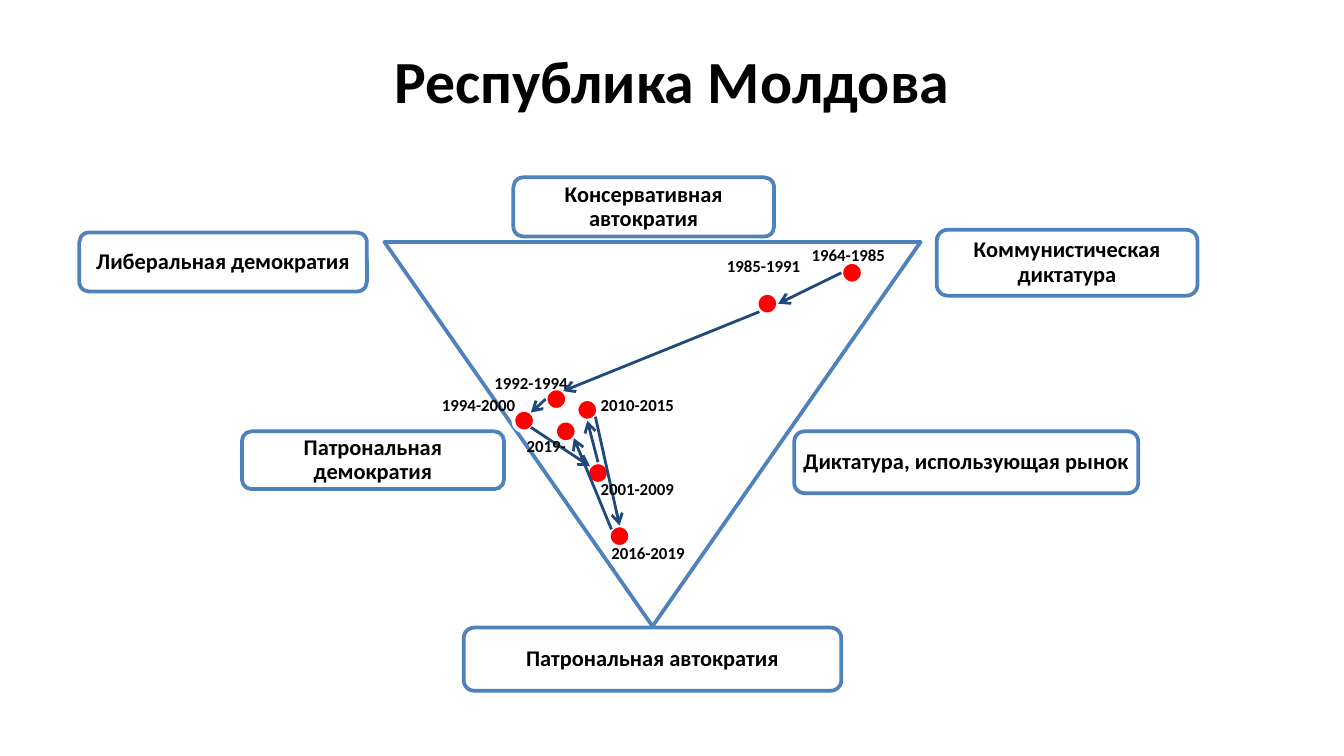
from dataclasses import dataclass

import pptx
import pptx.dml.color
import pptx.enum.shapes
import pptx.enum.text
import pptx.oxml
import pptx.oxml.ns
import pptx.util
from pptx.slide import Slide

CELL = 0.1
COLUMNS, ROWS = 100, 56.25
DOT_SIZE = 1.6
LABEL_WIDTH, LABEL_HEIGHT = 10.2, 2.5
FONT = "Calibri"
COLORS = {
    "text": "000000",
    "paper": "FFFFFF",
    "outline": "4F81BD",
    "arrow": "1F497D",
    "dot": "FF0000",
}
SHAPES = pptx.enum.shapes.MSO_SHAPE
ALIGN = pptx.enum.text.PP_ALIGN
ANCHOR = pptx.enum.text.MSO_ANCHOR


@dataclass(frozen=True)
class Regime:
    name: str
    column: float
    row: float
    width: float
    height: float


@dataclass(frozen=True)
class Stage:
    years: str
    dot: tuple[float, float]
    label: tuple[float, float]


@dataclass(frozen=True)
class Move:
    start: tuple[float, float]
    end: tuple[float, float]


REGIMES = [
    Regime("Кoммунистическая диктатура", 69.7, 17.1, 19.4, 4.9),
    Regime("Либеральная демократия", 5.9, 17.3, 21.4, 4.4),
    Regime("Патрональная автократия", 34.5, 46.7, 28.1, 4.7),
    Regime("Консервативная aвтократия", 38.2, 13.2, 19.4, 4.4),
    Regime("Диктатура, использующая рынок", 59.1, 32.1, 25.6, 4.6),
    Regime("Патрональная демократия", 18, 32.1, 19.5, 4.3),
]
STAGES = [
    Stage("1964-1985", (62.6, 19.5), (59.4, 17.7)),
    Stage("1985-1991", (56.3, 21.8), (53.1, 18.5)),
    Stage("1992-1994", (40.6, 28.9), (35.8, 27.2)),
    Stage("1994-2000", (38.2, 30.5), (31.9, 28.9)),
    Stage("2001-2009", (43.7, 34.4), (43.7, 35.1)),
    Stage("2010-2015", (42.9, 29.7), (43.7, 28.9)),
    Stage("2016-2019", (45.3, 39.1), (44.5, 39.9)),
    Stage("2019-", (41.3, 31.3), (38.2, 31.9)),
]
MOVES = [
    Move((62.6, 20.3), (57.9, 22.6)),
    Move((56.5, 23.2), (41.9, 29.1)),
    Move((40.6, 29.7), (39.5, 30.7)),
    Move((39.5, 31.8), (43.9, 34.7)),
    Move((44.5, 34.4), (43.7, 31.3)),
    Move((44.3, 31), (46.1, 39.1)),
    Move((45.5, 39.4), (42.7, 32.6)),
]


def cells(*counts: float) -> list[int]:
    return [pptx.util.Inches(count * CELL) for count in counts]


def color(name: str) -> pptx.dml.color.RGBColor:
    return pptx.dml.color.RGBColor.from_string(COLORS[name])


def write(para, text: str, size: float) -> None:
    span = para.add_run()
    span.text = text
    span.font.name = FONT
    span.font.size = pptx.util.Pt(size)
    span.font.bold = True
    span.font.color.rgb = color("text")


def draw_shape(page: Slide, kind, place: tuple, fill: str | None, outline: str):
    shape = page.shapes.add_shape(kind, *cells(*place))
    shape.shadow.inherit = False
    if fill:
        shape.fill.solid()
        shape.fill.fore_color.rgb = color(fill)
    else:
        shape.fill.background()
    shape.line.color.rgb = color(outline)
    shape.line.width = pptx.util.Pt(2)
    return shape


def draw_title(page: Slide, text: str) -> None:
    title = page.shapes.title
    title.left, title.top, title.width, title.height = cells(0, 2.1, COLUMNS, 7.7)
    title.text_frame.vertical_anchor = ANCHOR.MIDDLE
    para = title.text_frame.paragraphs[0]
    para.alignment = ALIGN.CENTER
    write(para, text, 32)


def draw_regime(page: Slide, regime: Regime) -> None:
    place = (regime.column, regime.row, regime.width, regime.height)
    box = draw_shape(page, SHAPES.ROUNDED_RECTANGLE, place, "paper", "outline")
    tint = next(box._element.spPr.iter(pptx.oxml.ns.qn("a:srgbClr")))
    alpha = pptx.oxml.parse_xml(f'<a:alpha {pptx.oxml.ns.nsdecls("a")} val="90000"/>')
    tint.append(alpha)
    frame = box.text_frame
    frame.word_wrap = True
    frame.vertical_anchor = ANCHOR.MIDDLE
    inset = pptx.util.Inches(0.02)
    frame.margin_left = frame.margin_right = inset
    frame.margin_top = frame.margin_bottom = inset
    para = frame.paragraphs[0]
    para.alignment = ALIGN.CENTER
    para.line_spacing = 0.9
    write(para, regime.name, 12)


def draw_dot(page: Slide, stage: Stage) -> None:
    draw_shape(page, SHAPES.OVAL, (*stage.dot, DOT_SIZE, DOT_SIZE), "dot", "paper")


def draw_label(page: Slide, stage: Stage) -> None:
    box = page.shapes.add_textbox(*cells(*stage.label, LABEL_WIDTH, LABEL_HEIGHT))
    box.text_frame.word_wrap = True
    write(box.text_frame.paragraphs[0], stage.years, 9)


def draw_move(page: Slide, move: Move) -> None:
    arrow = page.shapes.add_connector(
        pptx.enum.shapes.MSO_CONNECTOR.STRAIGHT, *cells(*move.start, *move.end)
    )
    arrow.line.color.rgb = color("arrow")
    arrow.line.width = pptx.util.Pt(1.5)
    namespace = pptx.oxml.ns.nsdecls("a")
    head = pptx.oxml.parse_xml(f'<a:tailEnd {namespace} type="arrow"/>')
    arrow.line._get_or_add_ln().append(head)
    arrow._element.spPr.append(pptx.oxml.parse_xml(f"<a:effectLst {namespace}/>"))


def main() -> None:
    deck = pptx.Presentation()
    deck.slide_width, deck.slide_height = cells(COLUMNS, ROWS)
    page = deck.slides.add_slide(deck.slide_layouts.get_by_name("Title Only"))
    draw_title(page, "Республика Молдова")
    triangle = draw_shape(
        page, SHAPES.ISOSCELES_TRIANGLE, (28.6, 18, 39.9, 28.6), None, "outline"
    )
    triangle.rotation = 180
    for regime in REGIMES:
        draw_regime(page, regime)
    for stage in STAGES:
        draw_dot(page, stage)
    for move in MOVES:
        draw_move(page, move)
    for stage in STAGES:
        draw_label(page, stage)
    deck.save("out.pptx")


if __name__ == "__main__":
    main()
